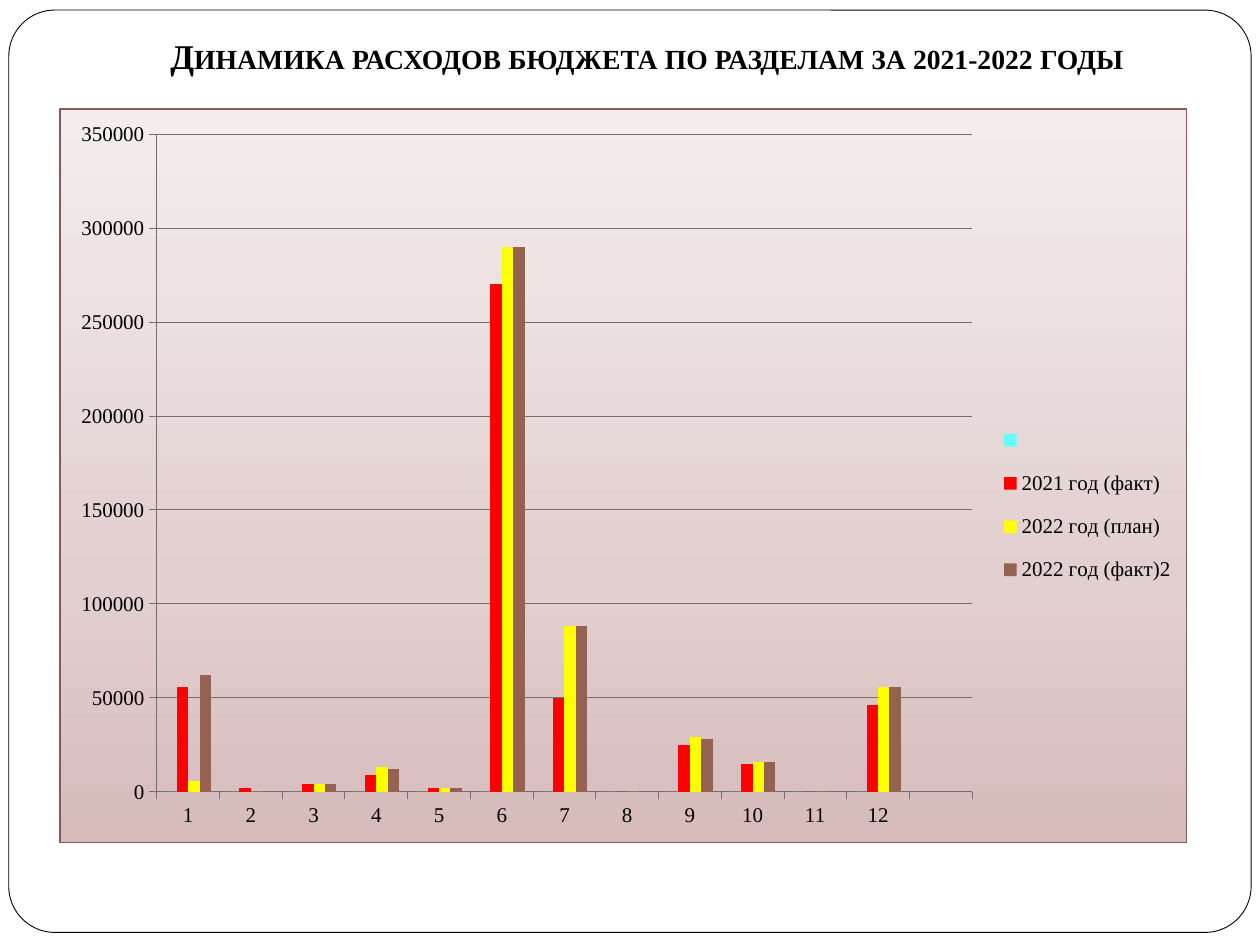
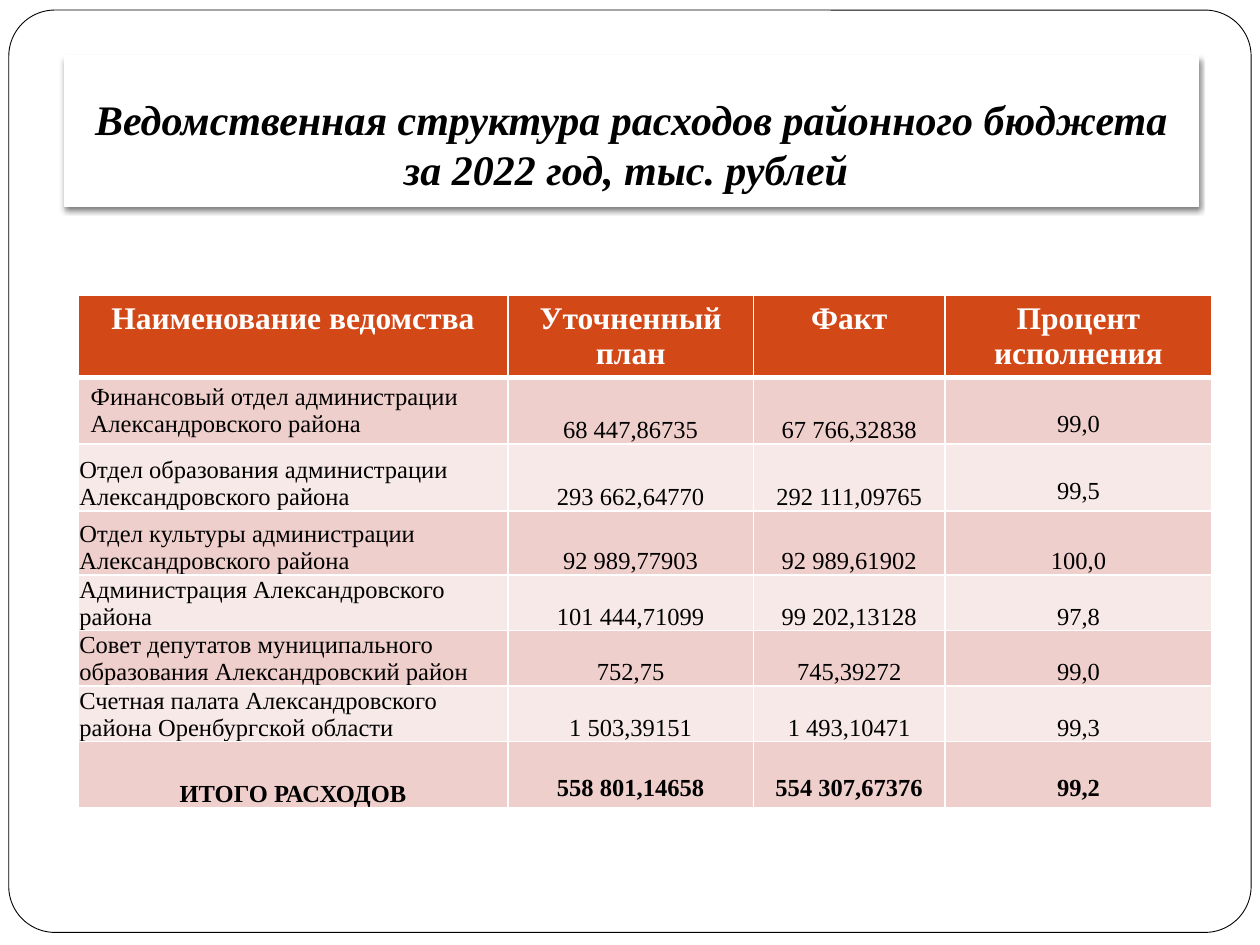
import pptx
import pptx.chart.data
import pptx.dml.color
import pptx.enum.chart
import pptx.enum.shapes
import pptx.enum.text
import pptx.oxml
import pptx.oxml.ns
import pptx.util
from lxml import etree

Inches = pptx.util.Inches
Pt = pptx.util.Pt
RGBColor = pptx.dml.color.RGBColor
ALIGN = pptx.enum.text.PP_ALIGN
ANCHOR = pptx.enum.text.MSO_ANCHOR
qn = pptx.oxml.ns.qn

FONT = "Times New Roman"
BLACK = RGBColor(0x00, 0x00, 0x00)
WHITE = RGBColor(0xFF, 0xFF, 0xFF)
GRID = RGBColor(0x70, 0x70, 0x70)
HEADER = RGBColor(0xD3, 0x48, 0x17)
BANDS = [RGBColor(0xF7, 0xE9, 0xE8), RGBColor(0xEF, 0xCF, 0xCC)]
NAMESPACES = pptx.oxml.ns.nsdecls("a", "c")


def format_text(text_frame, size, color, bold=False, italic=False, align=ALIGN.CENTER):
    for paragraph in text_frame.paragraphs:
        paragraph.alignment = align
        for run in paragraph.runs:
            run.font.name = FONT
            run.font.size = Pt(size)
            run.font.bold = bold
            run.font.italic = italic
            run.font.color.rgb = color


def add_titled_slide(text, left, top, width, height, size, italic):
    slide = presentation.slides.add_slide(title_layout)
    title = slide.shapes.title
    title.left, title.top = Inches(left), Inches(top)
    title.width, title.height = Inches(width), Inches(height)
    title.fill.solid()
    title.fill.fore_color.rgb = WHITE
    text_frame = title.text_frame
    text_frame.text = text
    text_frame.word_wrap = True
    text_frame.auto_size = pptx.enum.text.MSO_AUTO_SIZE.NONE
    text_frame.vertical_anchor = ANCHOR.BOTTOM
    text_frame.margin_bottom = Inches(0.1)
    format_text(text_frame, size, BLACK, True, italic)
    return slide


presentation = pptx.Presentation()
presentation.slide_width = Inches(10)
presentation.slide_height = Inches(7.5)
title_layout = presentation.slide_layouts[5]

chart_slide = add_titled_slide(
    "Динамика расходов бюджета по разделам за 2021-2022 годы",
    0.5, 0.24, 9.27, 0.47, 19.8, False)
for run in chart_slide.shapes.title.text_frame.paragraphs[0].runs:
    run.font._element.set("cap", "small")

frame = chart_slide.shapes.add_shape(
    pptx.enum.shapes.MSO_SHAPE.ROUNDED_RECTANGLE,
    Inches(0.07), Inches(0.08), Inches(9.86), Inches(7.32))
frame.adjustments[0] = 0.05
frame.shadow.inherit = False
frame.fill.solid()
frame.fill.fore_color.rgb = WHITE
frame.line.color.rgb = BLACK
frame.line.width = Pt(0.5)
title_layout.shapes.element.insert(2, frame.element)

series_list = [
    (" ", [0] * 12, RGBColor(0x66, 0xFF, 0xFF)),
    ("2021 год (факт)",
     [56000, 2000, 4000, 9000, 2000, 270000, 50000, 0, 25000, 15000, 0, 46000],
     RGBColor(0xFF, 0x00, 0x00)),
    ("2022 год (план)",
     [6000, 0, 4000, 13000, 2000, 290000, 88000, 0, 29000, 16000, 0, 56000],
     RGBColor(0xFF, 0xFF, 0x00)),
    ("2022 год (факт)2",
     [62000, 0, 4000, 12000, 2000, 290000, 88000, 0, 28000, 16000, 0, 56000],
     RGBColor(0x95, 0x62, 0x51)),
]
chart_width, chart_height = 8.95, 5.83
chart_data = pptx.chart.data.CategoryChartData()
chart_data.categories = [str(number) for number in range(1, 13)] + [" "]
for name, values, color in series_list:
    chart_data.add_series(name, values + [None])
chart = chart_slide.shapes.add_chart(
    pptx.enum.chart.XL_CHART_TYPE.COLUMN_CLUSTERED,
    Inches(0.47), Inches(0.86), Inches(chart_width), Inches(chart_height), chart_data).chart
chart.has_title = False
chart.font.name = FONT
chart.font.size = Pt(12)
chart.font.color.rgb = BLACK
chart.has_legend = True
chart.legend.position = pptx.enum.chart.XL_LEGEND_POSITION.RIGHT
chart.legend.include_in_layout = False

plot = chart.plots[0]
plot.gap_width = 150
plot.vary_by_categories = False
for series, (name, values, color) in zip(plot.series, series_list):
    series.format.fill.solid()
    series.format.fill.fore_color.rgb = color
    series.invert_if_negative = False

value_axis = chart.value_axis
value_axis.minimum_scale = 0
value_axis.maximum_scale = 350000
value_axis.major_unit = 50000
value_axis.has_major_gridlines = True
value_axis.tick_labels.number_format = "0"
value_axis.tick_labels.number_format_is_linked = False
for axis in (value_axis, chart.category_axis):
    axis.major_tick_mark = pptx.enum.chart.XL_TICK_MARK.OUTSIDE
for ruled in (value_axis, chart.category_axis, value_axis.major_gridlines):
    ruled.format.line.color.rgb = GRID
    ruled.format.line.width = Pt(0.5)

chart_element = chart._chartSpace.find(qn("c:chart"))
plot_area = chart_element.find(qn("c:plotArea"))
legend = chart_element.find(qn("c:legend"))
chart_sizes = (chart_width, chart_height) * 2
for parent, position, target, bounds in (
        (plot_area, 0, '<c:layoutTarget val="inner"/>', (0.77, 0.2, 6.48, 5.23)),
        (legend, 1, "", (7.45, 2.38, 1.43, 1.54))):
    for layout in parent.findall(qn("c:layout")):
        parent.remove(layout)
    settings = "".join(f'<c:{key}Mode val="edge"/>' for key in "xy")
    settings += "".join(f'<c:{key} val="{length / size:.4f}"/>'
                        for key, length, size in zip("xywh", bounds, chart_sizes))
    parent.insert(position, pptx.oxml.parse_xml(
        f"<c:layout {NAMESPACES}><c:manualLayout>{target}{settings}</c:manualLayout></c:layout>"))

stops = "".join(
    f'<a:gs pos="{position * 1000}"><a:srgbClr val="{color}"/></a:gs>'
    for position, color in ((0, "D7BBBB"), (35, "E2CFCF"), (100, "F4EDED")))
chart_element.addnext(pptx.oxml.parse_xml(
    f'<c:spPr {NAMESPACES}><a:gradFill><a:gsLst>{stops}</a:gsLst>'
    f'<a:lin ang="16200000" scaled="0"/></a:gradFill><a:ln w="{Pt(0.75)}">'
    '<a:solidFill><a:srgbClr val="835A5A"/></a:solidFill></a:ln></c:spPr>'))

table_slide = add_titled_slide(
    "Ведомственная структура расходов районного бюджета за 2022 год, тыс. рублей ",
    0.51, 0.44, 9, 1.2, 24, True)
title = table_slide.shapes.title
title.line.color.rgb = WHITE
title.line.width = Pt(0.75)
title.element.spPr.append(pptx.oxml.parse_xml(
    f'<a:effectLst {NAMESPACES}><a:outerShdw blurRad="{Pt(3)}" dist="{Pt(2)}" dir="5400000" '
    'rotWithShape="0"><a:srgbClr val="000000"><a:alpha val="50000"/></a:srgbClr>'
    '</a:outerShdw></a:effectLst>'))

rows = [
    ("Наименование ведомства", "Уточненный план", "Факт", "Процент исполнения"),
    ("Финансовый отдел администрации Александровского района",
     "68 447,86735", "67 766,32838", "99,0"),
    ("Отдел образования администрации Александровского района",
     "293 662,64770", "292 111,09765", "99,5"),
    ("Отдел культуры администрации Александровского района",
     "92 989,77903", "92 989,61902", "100,0"),
    ("Администрация Александровского района",
     "101 444,71099", "99 202,13128", "97,8"),
    ("Совет депутатов муниципального образования Александровский район",
     "752,75", "745,39272", "99,0"),
    ("Счетная палата Александровского района Оренбургской области",
     "1 503,39151", "1 493,10471", "99,3"),
    ("ИТОГО РАСХОДОВ", "558 801,14658", "554 307,67376", "99,2"),
]
column_widths = [3.41, 1.95, 1.52, 2.12]
row_heights = [0.65, 0.53, 0.53, 0.51, 0.44, 0.44, 0.44, 0.53]
total_row = len(rows) - 1
raised_cells = {(1, 3), (2, 3), (total_row, 1), (total_row, 2), (total_row, 3)}
table = table_slide.shapes.add_table(
    len(rows), len(column_widths), Inches(0.62), Inches(2.34),
    Inches(sum(column_widths)), Inches(sum(row_heights))).table
for column, width in zip(table.columns, column_widths):
    column.width = Inches(width)
for row, height in zip(table.rows, row_heights):
    row.height = Inches(height)

for row_index, texts in enumerate(rows):
    is_header = row_index == 0
    for column_index, text in enumerate(texts):
        cell = table.cell(row_index, column_index)
        cell.text_frame.text = text
        cell.fill.solid()
        cell.fill.fore_color.rgb = HEADER if is_header else BANDS[row_index % 2]
        is_name = column_index == 0 and 0 < row_index < total_row
        format_text(cell.text_frame, 18 if is_header else 14, WHITE if is_header else BLACK,
                    row_index in (0, total_row), align=ALIGN.LEFT if is_name else ALIGN.CENTER)
        if not is_header and (row_index, column_index) != (1, 0):
            cell.vertical_anchor = ANCHOR.BOTTOM
            cell.margin_left = cell.margin_right = cell.margin_top = Inches(0.01)
            is_raised = (row_index, column_index) in raised_cells
            cell.margin_bottom = Inches(0.05 if is_raised else 0)
        thick_side = {0: "lnB", 1: "lnT"}.get(row_index)
        properties = cell._tc.get_or_add_tcPr()
        for position, side in enumerate(("lnL", "lnR", "lnT", "lnB")):
            line = etree.Element(qn(f"a:{side}"), w=str(Pt(3 if side == thick_side else 1)))
            fill = etree.SubElement(line, qn("a:solidFill"))
            etree.SubElement(fill, qn("a:srgbClr"), val=str(WHITE))
            properties.insert(position, line)

presentation.save("out.pptx")
